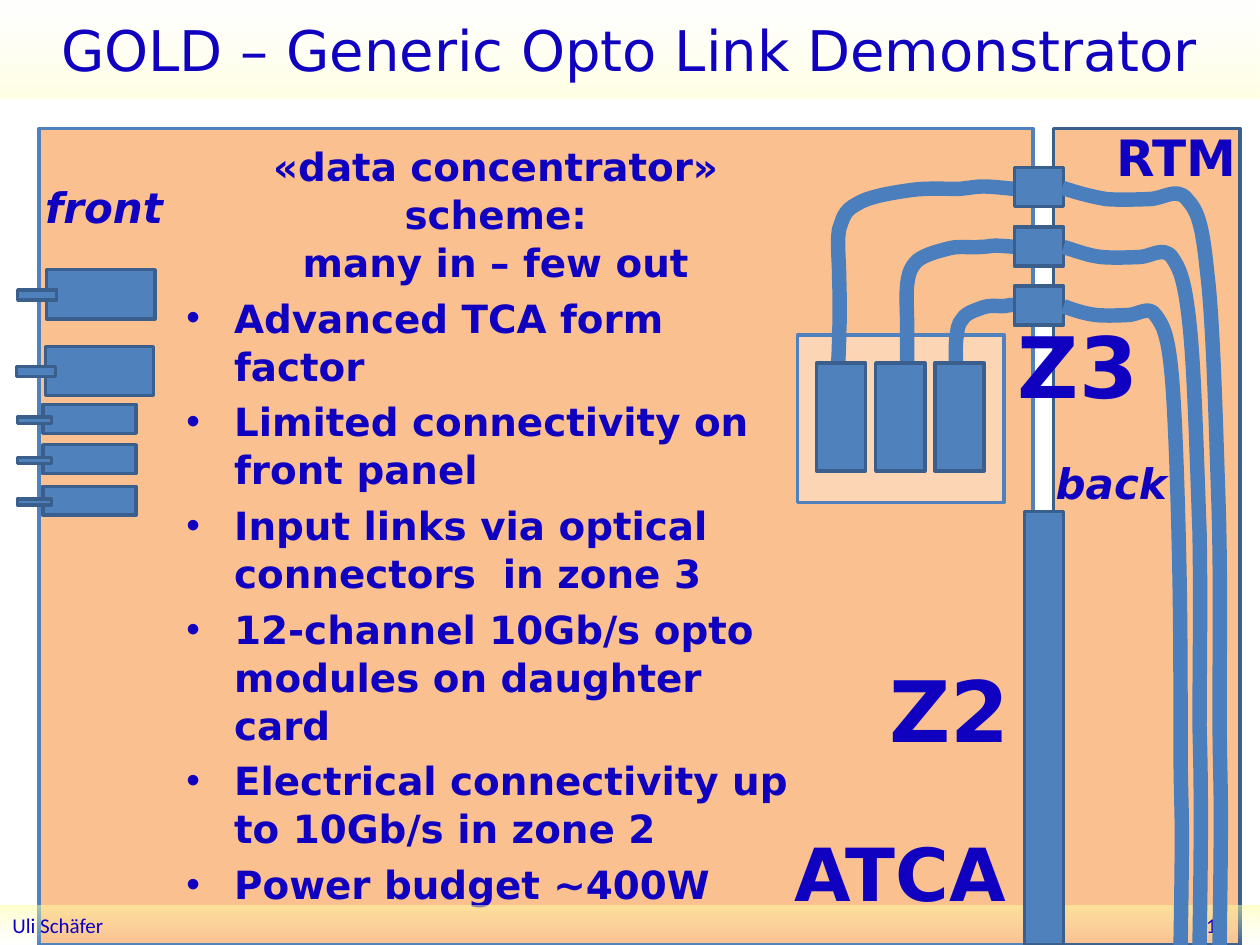
from lxml import etree
from pptx import Presentation
from pptx.dml.color import RGBColor
from pptx.enum.shapes import MSO_SHAPE as SHAPE
from pptx.enum.text import MSO_ANCHOR as ANCHOR, MSO_AUTO_SIZE as AUTO, PP_ALIGN as ALIGN
from pptx.oxml import parse_xml
from pptx.oxml.ns import nsdecls, qn
from pptx.util import Pt

PX = 9144  # 100 px to the inch
WIDTH, HEIGHT = 1000, 750
INK = RGBColor(0x0F, 0x01, 0xBF)
BOARD = RGBColor(0xFA, 0xC0, 0x90)
CARD = RGBColor(0xFC, 0xD5, 0xB5)
BLUE = RGBColor(0x4F, 0x81, 0xBD)
EDGE = RGBColor(0x3A, 0x5F, 0x8C)
FIBRE = RGBColor(0x4B, 0x7E, 0xBC)
SANS, SMALL = "DejaVu Sans", "Calibri"

TITLE = "GOLD – Generic Opto Link Demonstrator"
SCHEME = ["«data concentrator» scheme:", "many in – few out"]
BULLETS = [
    "Advanced TCA form factor",
    "Limited connectivity on front panel",
    "Input links via optical connectors  in zone 3",
    "12-channel 10Gb/s opto modules on daughter card",
    "Electrical connectivity up to 10Gb/s in zone 2",
    "Power budget ~400W",
]
# text, box, size, italic, alignment, line spacing
LABELS = [
    ("RTM", (867, 86, 133, 86), 28.6, False, ALIGN.CENTER, 0.8),
    ("front", (26, 125, 141, 78), 24, True, ALIGN.LEFT, 1),
    ("ATCA", (617, 648, 195, 102), 41.8, False, ALIGN.CENTER, 0.8),
    ("Z2", (695, 523, 117, 94), 48.4, False, ALIGN.CENTER, 0.8),
    ("Z3", (797, 258, 117, 78), 48.4, False, ALIGN.CENTER, 0.8),
    ("back", (828, 344, 141, 78), 24, True, ALIGN.LEFT, 1),
]
# front panel sockets, each with its plug
LARGE_SOCKETS = [(37, 214), (36, 275)]
SMALL_SOCKETS = [(34, 321), (34, 353), (34, 386)]
STEP = 47  # pitch of opto modules and zone 3 connectors
# fibres as cubic curves: start point, then three points per curve
CARD_FIBRES = [
    [(664, 307), (665, 293), (666, 278), (666, 264), (667, 249), (666, 220), (666, 220),
     (666, 206), (664, 192), (666, 182), (669, 173), (670, 167), (680, 162),
     (689, 156), (708, 153), (722, 151), (735, 149), (751, 150), (761, 150),
     (771, 149), (774, 148), (781, 148), (788, 148), (805, 150), (805, 150)],
    [(719, 339), (719, 325), (720, 312), (720, 299), (720, 286), (720, 260), (720, 260),
     (720, 247), (719, 235), (720, 226), (721, 217), (723, 212), (728, 207),
     (734, 202), (746, 199), (754, 197), (762, 195), (772, 197), (778, 196),
     (784, 196), (786, 195), (790, 195), (795, 195), (805, 196), (805, 196)],
    [(758, 370), (758, 358), (759, 346), (759, 335), (759, 323), (759, 299), (759, 299),
     (759, 289), (758, 277), (759, 269), (760, 262), (760, 257), (764, 253),
     (767, 248), (775, 246), (780, 244), (785, 242), (792, 243), (795, 243),
     (799, 243), (800, 242), (803, 242), (806, 242), (813, 243), (813, 243)],
]
RTM_FIBRES = [
    [(843, 149), (855, 153), (866, 156), (878, 158), (889, 159), (912, 158), (912, 158),
     (923, 158), (934, 148), (942, 158), (950, 167), (954, 175), (958, 215),
     (963, 254), (965, 337), (967, 395), (969, 453), (968, 519), (968, 561),
     (968, 604), (969, 618), (969, 649), (969, 681), (968, 750), (968, 750)],
    [(844, 196), (854, 199), (864, 203), (874, 204), (884, 205), (904, 204), (904, 204),
     (913, 204), (923, 195), (930, 204), (936, 213), (940, 220), (944, 257),
     (948, 293), (950, 369), (952, 422), (953, 476), (952, 537), (952, 576),
     (953, 615), (953, 628), (953, 657), (953, 686), (952, 750), (952, 750)],
    [(844, 243), (852, 246), (861, 249), (870, 250), (878, 251), (895, 250), (895, 250),
     (903, 250), (912, 242), (917, 250), (923, 258), (927, 265), (930, 298),
     (933, 332), (935, 401), (936, 450), (937, 499), (937, 555), (937, 591),
     (937, 627), (938, 638), (938, 665), (938, 691), (937, 750), (937, 750)],
]

prs = Presentation()
prs.slide_width, prs.slide_height = WIDTH * PX, HEIGHT * PX
slide = prs.slides.add_slide(prs.slide_layouts[5])


def emu(box):
    return [v * PX for v in box]


def add_rect(box, fill=BLUE, line=EDGE):
    s = slide.shapes.add_shape(SHAPE.RECTANGLE, *emu(box))
    s.shadow.inherit = False
    s.fill.solid()
    s.fill.fore_color.rgb = fill
    s.line.color.rgb = line
    s.line.width = Pt(2)
    return s


def fade(s, angle, alpha):
    """Fill with pale yellow that fades out along the angle in degrees."""
    s.fill.background()
    no_fill = s._element.spPr.find(qn("a:noFill"))
    no_fill.getparent().replace(no_fill, parse_xml(
        f'<a:gradFill {nsdecls("a")} rotWithShape="1"><a:gsLst>'
        f'<a:gs pos="0"><a:srgbClr val="FFFFA0"><a:alpha val="{alpha * 1000}"/></a:srgbClr></a:gs>'
        '<a:gs pos="100000"><a:srgbClr val="FFFFC5"><a:alpha val="0"/></a:srgbClr></a:gs>'
        f'</a:gsLst><a:lin ang="{angle * 60000}" scaled="0"/></a:gradFill>'))


def add_run(p, text, size, font=SANS, bold=False, italic=False):
    r = p.add_run()
    r.text = text
    r.font.name, r.font.size = font, Pt(size)
    r.font.bold, r.font.italic = bold, italic
    r.font.color.rgb = INK


def prepare(s, anchor=ANCHOR.MIDDLE, align=ALIGN.LEFT):
    tf = s.text_frame
    tf.word_wrap, tf.auto_size, tf.vertical_anchor = True, AUTO.NONE, anchor
    tf.paragraphs[0].alignment = align
    return tf


def add_text(box, **layout):
    return prepare(slide.shapes.add_textbox(*emu(box)), **layout)


def add_fibre(points):
    builder = slide.shapes.build_freeform(*points[0], scale=PX)
    builder.add_line_segments(points[1:], close=False)
    s = builder.convert_to_shape()
    s.shadow.inherit = False
    s.fill.background()
    s.line.color.rgb = FIBRE
    s.line.width = Pt(8.25)
    # turn every three straight segments into one cubic curve
    segments = list(s._element.iter(qn("a:lnTo")))
    outline = segments[0].getparent()
    for i in range(0, len(segments), 3):
        curve = etree.SubElement(outline, qn("a:cubicBezTo"))
        for seg in segments[i:i + 3]:
            curve.append(seg[0])
            outline.remove(seg)


def add_socket(x, y, size, plug):
    """Add a socket and its plug; plug is offset and size from the socket."""
    dx, dy, w, h = plug
    add_rect((x, y, *size))
    add_rect((x + dx, y + dy, w, h))


title = slide.shapes.title
title.left, title.top, title.width, title.height = emu((0, 0, WIDTH, 78))
fade(title, 270, 29)
add_run(prepare(title, align=ALIGN.CENTER).paragraphs[0], TITLE, 32)

add_rect((31, 102, 789, 648), BOARD, BLUE)
add_rect((836, 102, 148, 648), BOARD)
add_rect((633, 266, 164, 133), CARD, BLUE)

tf = add_text((138, 107, 511, 572), anchor=ANCHOR.TOP, align=ALIGN.CENTER)
p = tf.paragraphs[0]
p.line_spacing = 1.03
add_run(p, SCHEME[0], 22.2, bold=True)
p.add_line_break()
add_run(p, SCHEME[1], 22.2, bold=True)
for text in BULLETS:
    p = tf.add_paragraph()
    pPr = p._p.get_or_add_pPr()
    pPr.set("marL", str(38 * PX))
    pPr.set("indent", str(-38 * PX))
    etree.SubElement(pPr, qn("a:buFont")).set("typeface", "Arial")
    etree.SubElement(pPr, qn("a:buChar")).set("char", "•")
    p.line_spacing, p.space_before = 1.03, Pt(4.4)
    add_run(p, text, 22.2, bold=True)

footer = add_rect((0, 719, WIDTH, 31))
footer.line.fill.background()
fade(footer, 90, 54)
add_run(prepare(footer).paragraphs[0], "Uli Schäfer", 12, SMALL)
number = add_text((773, 718, 211, 32), align=ALIGN.RIGHT)
add_run(number.paragraphs[0], "16", 12, SMALL)

add_rect((813, 406, 31, 344))
for i, (card_fibre, rtm_fibre) in enumerate(zip(CARD_FIBRES, RTM_FIBRES)):
    add_fibre(card_fibre)
    add_rect((648 + i * STEP, 288, 39, 86))
    add_rect((805, 133 + i * STEP, 39, 31))
    add_fibre(rtm_fibre)

for x, y in LARGE_SOCKETS:
    add_socket(x, y, (86, 39), (-23, 16, 31, 8))
for x, y in SMALL_SOCKETS:
    add_socket(x, y, (74, 23), (-20, 10, 27, 5))

for text, box, size, italic, align, spacing in LABELS:
    p = add_text(box, align=align).paragraphs[0]
    p.line_spacing = spacing
    add_run(p, text, size, bold=True, italic=italic)

prs.save("out.pptx")
